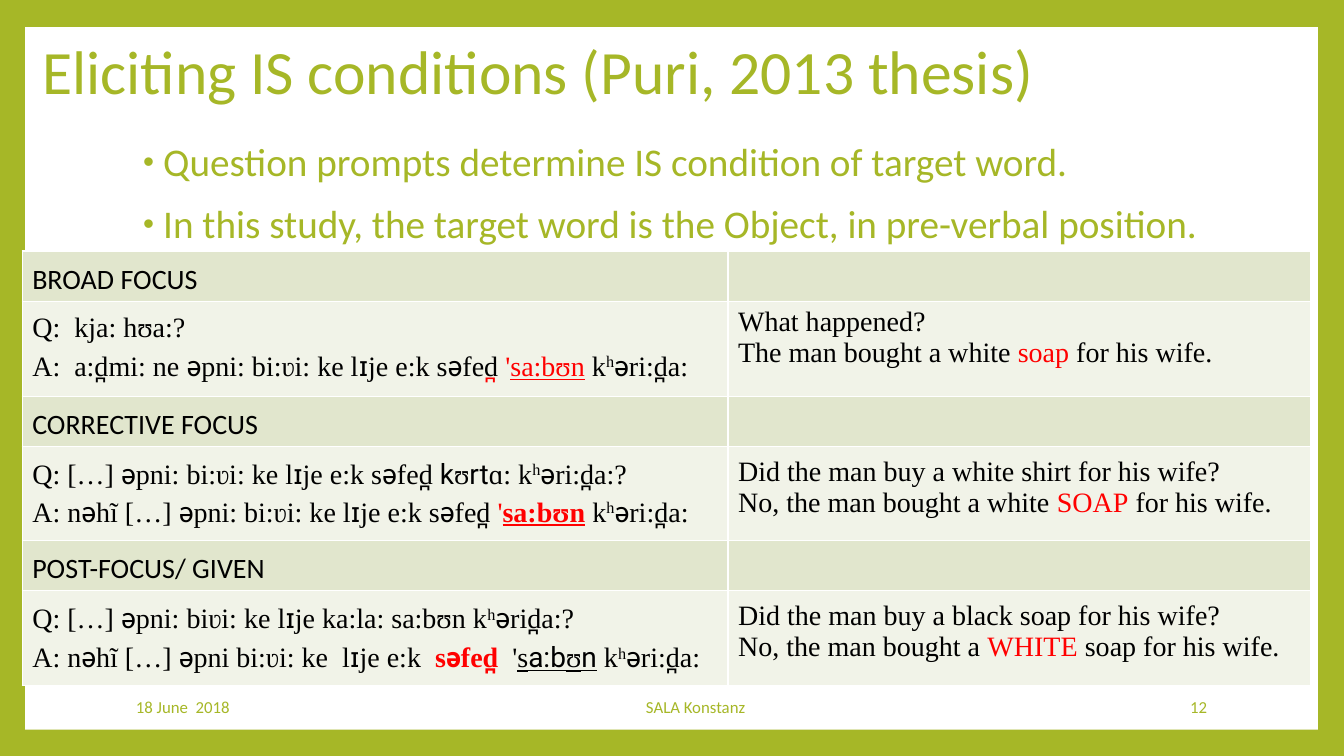
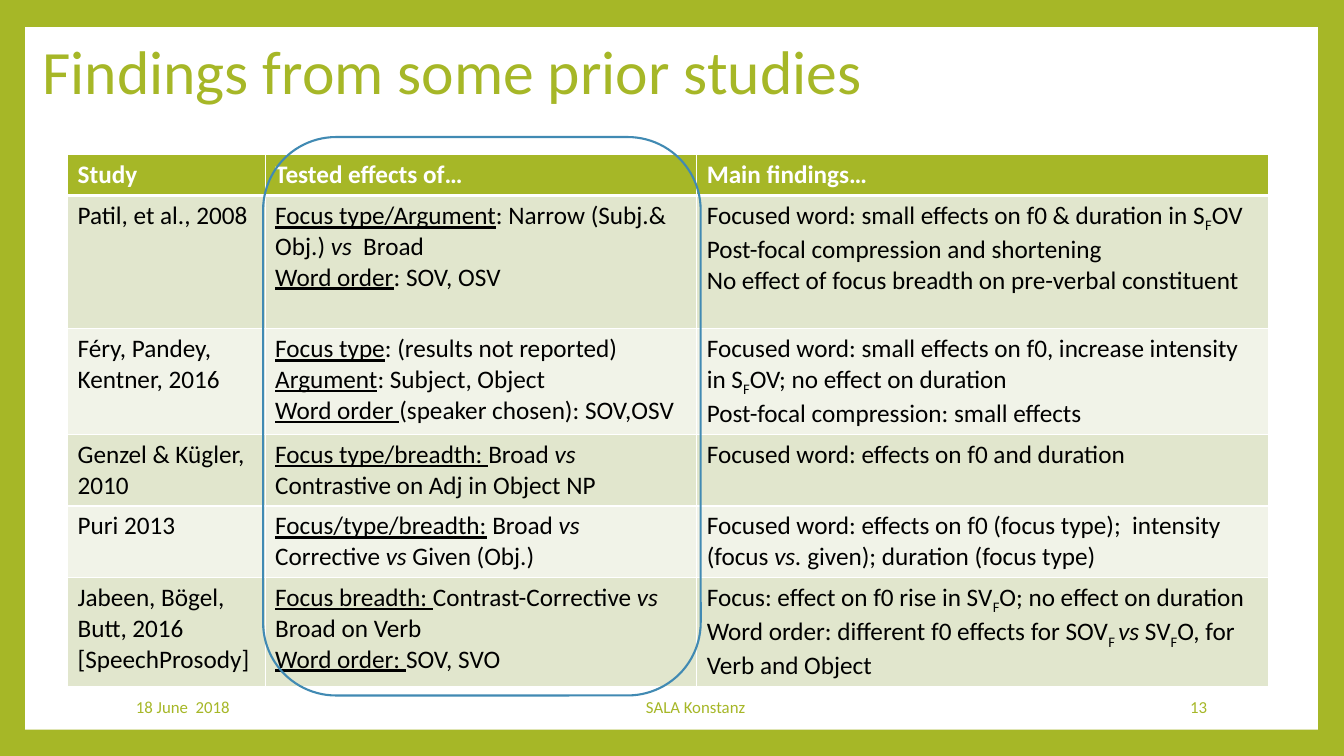
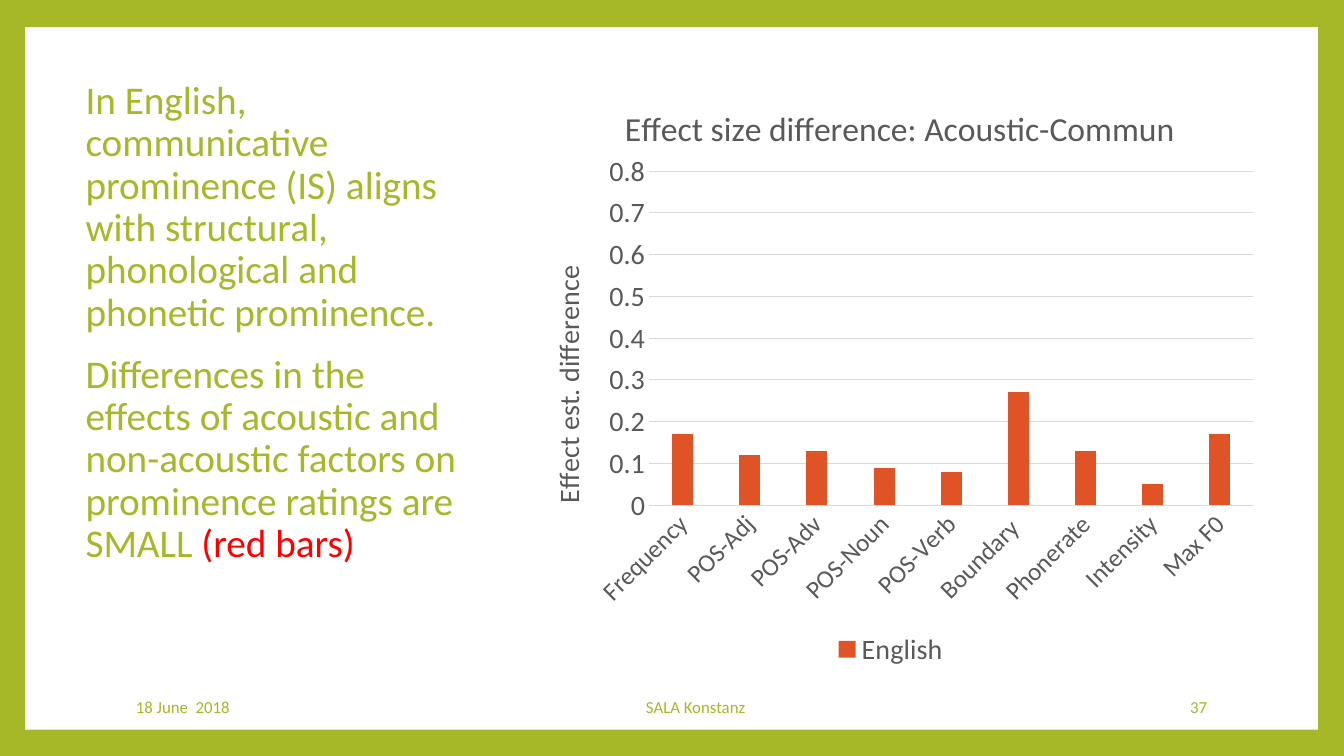
import itertools

import pptx
import pptx.chart.data
import pptx.dml.color
import pptx.enum.chart
import pptx.enum.shapes
import pptx.enum.text
import pptx.oxml
import pptx.oxml.ns
import pptx.util

PX = 9144
COLOURS = {
    "green": "A6B727", "white": "FFFFFF", "black": "000000", "red": "FF0000",
    "band": "E1E6CD", "pale": "F1F3E8", "blue": "418AB3", "orange": "DF5327",
    "grey": "595959", "grid": "D9D9D9",
}
RGB = {name: pptx.dml.color.RGBColor.from_string(code) for name, code in COLOURS.items()}
ALIGN = pptx.enum.text.PP_ALIGN
MIDDLE = pptx.enum.text.MSO_ANCHOR.MIDDLE
SHAPES = pptx.enum.shapes.MSO_SHAPE
Pt = pptx.util.Pt
NAMESPACES = pptx.oxml.ns.nsdecls("a", "c")


def write(frame, markup, size, colour, font="Calibri", bold=False):
    # markup
    frame.text = "\n" * markup.count("\n")
    for para, line in zip(frame.paragraphs, markup.split("\n")):
        for index, piece in enumerate(line.replace("}", "{").split("{")):
            flags, text = piece.split("|") if index % 2 else ("", piece)
            for phonetic, letters in itertools.groupby(
                    text, lambda letter: font != "Calibri" and letter in "əɪ̪"):
                span = para.add_run()
                span.text = "".join(letters)
                span.font.name = "Roboto" if phonetic or "p" in flags else font
                span.font.size = Pt(size)
                span.font.color.rgb = RGB["red" if "r" in flags else colour]
                span.font.bold = bold or "b" in flags
                span.font.italic = "i" in flags
                span.font.underline = "u" in flags
                if "s" in flags or "f" in flags:
                    span.font._element.set("baseline", "30000" if "s" in flags else "-25000")


def add_grid(page, left, top, widths, heights, fills):
    table = page.shapes.add_table(
        len(heights), len(widths), left * PX, top * PX,
        sum(widths) * PX, sum(heights) * PX).table
    for column, width in zip(table.columns, widths):
        column.width = width * PX
    for row, height, fill in zip(table.rows, heights, fills):
        row.height = height * PX
        for cell in row.cells:
            for side in "LRTB":
                weight = 3 if fill == "green" and side == "B" else 1
                cell._tc.get_or_add_tcPr().append(pptx.oxml.parse_xml(
                    f'<a:ln{side} {NAMESPACES} w="{Pt(weight)}"><a:solidFill>'
                    f'<a:srgbClr val="{COLOURS["white"]}"/></a:solidFill></a:ln{side}>'))
            cell.fill.solid()
            cell.fill.fore_color.rgb = RGB[fill]
    return table


deck = pptx.Presentation()
deck.slide_width, deck.slide_height = 1333 * PX, 750 * PX

pages = []
for number, title in [
    ("12", "Eliciting IS conditions (Puri, 2013 thesis)"),
    ("13", "Findings from some prior studies"),
    ("37", ""),
]:
    page = deck.slides.add_slide(deck.slide_layouts[6])
    pages.append(page)
    page.background.fill.solid()
    page.background.fill.fore_color.rgb = RGB["green"]
    panel = page.shapes.add_shape(SHAPES.RECTANGLE, 25 * PX, 27 * PX, 1282 * PX, 697 * PX)
    panel.shadow.inherit = False
    panel.fill.solid()
    panel.fill.fore_color.rgb = RGB["white"]
    panel.line.fill.background()
    if title:
        box = page.shapes.add_textbox(22 * PX, 0, 1080 * PX, 148 * PX)
        frame = box.text_frame
        frame.word_wrap = True
        frame.vertical_anchor = MIDDLE
        frame.margin_left = 20 * PX
        frame.margin_top = frame.margin_right = frame.margin_bottom = 0
        write(frame, title, 44, "green")
        frame.paragraphs[0].line_spacing = 0.9
    for left, width, text, align in [
        (125, 255, "18 June  2018", ALIGN.LEFT),
        (432, 516, "SALA Konstanz", ALIGN.CENTER),
        (1020, 187, number, ALIGN.RIGHT),
    ]:
        box = page.shapes.add_textbox(left * PX, 681 * PX, width * PX, 40 * PX)
        box.text_frame.word_wrap = True
        box.text_frame.vertical_anchor = MIDDLE
        write(box.text_frame, text, 12, "green")
        box.text_frame.paragraphs[0].alignment = align

conditions_page, studies_page, english_page = pages

for page, left, top, width, height, margin, indent, text in [
    (conditions_page, 127, 137, 1131, 442, 25, -20,
     "Question prompts determine IS condition of target word.\n"
     "In this study, the target word is the Object, in pre-verbal position."),
    (english_page, 70, 75, 408, 506, 5, 0,
     "In English, communicative prominence (IS) aligns with structural, "
     "phonological and phonetic prominence.\n"
     "Differences in the effects of acoustic and non-acoustic factors on "
     "prominence ratings are SMALL {r|(red bars)}"),
]:
    box = page.shapes.add_textbox(left * PX, top * PX, width * PX, height * PX)
    box.text_frame.word_wrap = True
    write(box.text_frame, text, 28, "green")
    for para in box.text_frame.paragraphs:
        para.line_spacing = 0.9
        para.space_before = Pt(14)
        properties = para._p.get_or_add_pPr()
        properties.set("marL", str(margin * PX))
        properties.set("indent", str(indent * PX))
        if indent:
            for bullet in [
                f'<a:buClr {NAMESPACES}><a:srgbClr val="{COLOURS["green"]}"/></a:buClr>',
                f'<a:buSzPct {NAMESPACES} val="80000"/>',
                f'<a:buFont {NAMESPACES} typeface="Arial"/>',
                f'<a:buChar {NAMESPACES} char="•"/>',
            ]:
                properties.append(pptx.oxml.parse_xml(bullet))

conditions = [
    ("BROAD FOCUS",
     "Q:  kja: hʊa:?\n"
     "A:  a:d̪mi: ne əpni: bi:ʋi: ke lɪje e:k səfed{r|̪ '}{ru|sa:bʊn} k{s|h}əri:d̪a:",
     "What happened?\nThe man bought a white {r|soap} for his wife."),
    ("CORRECTIVE FOCUS",
     "Q: […] əpni: bi:ʋi: ke lɪje e:k səfed{p|̪ k}ʊ{p|rt}ɑ: k{s|h}əri:d̪a:?\n"
     "A: nəhĩ […] əpni: bi:ʋi: ke lɪje e:k səfed̪ {r|'}{rbu|sa:bʊn} k{s|h}əri:d̪a:",
     "Did the man buy a white shirt for his wife?\n"
     "No, the man bought a white {r|SOAP} for his wife."),
    ("POST-FOCUS/ GIVEN",
     "Q: […] əpni: biʋi: ke lɪje ka:la: sa:bʊn k{s|h}ərid̪a:?\n"
     "A: nəhĩ […] əpni bi:ʋi: ke  lɪje e:k  {rb|səfed}{rbp|̪  }'"
     "{u|s}{pu|a:b}{u|ʊ}{pu|n} k{s|h}əri:d̪a:",
     "Did the man buy a black soap for his wife?\n"
     "No, the man bought a {r|WHITE} soap for his wife."),
]
table = add_grid(conditions_page, 22, 249, [700, 578], [50, 94, 50, 93, 50, 94],
                 ["band", "pale"] * 3)
for index, (heading, dialogue, meaning) in enumerate(conditions):
    heading_frame = table.cell(2 * index, 0).text_frame
    dialogue_frame = table.cell(2 * index + 1, 0).text_frame
    meaning_frame = table.cell(2 * index + 1, 1).text_frame
    write(heading_frame, heading, 20, "black")
    write(dialogue_frame, dialogue, 20, "black", "Times New Roman")
    write(meaning_frame, meaning, 20, "black", "Times New Roman")
    for para in heading_frame.paragraphs + dialogue_frame.paragraphs:
        para.line_spacing = 1.2
    if index:
        meaning_frame.paragraphs[0].line_spacing = 1.15
table.cell(3, 0).text_frame.paragraphs[1].line_spacing = 1.15

studies = [
    ("Study", "Tested effects of…", "Main findings…"),
    ("Patil, et al., 2008",
     "{u|Focus type/Argument}: Narrow (Subj.& Obj.) {i|vs } Broad\n{u|Word order}: SOV, OSV",
     "Focused word: small effects on f0 & duration in S{f|F}OV\n"
     "Post-focal compression and shortening\n"
     "No effect of focus breadth on pre-verbal constituent"),
    ("Féry, Pandey, Kentner, 2016",
     "{u|Focus type}: (results not reported)\n{u|Argument}: Subject, Object\n"
     "{u|Word order }(speaker chosen): SOV,OSV",
     "Focused word: small effects on f0, increase intensity in S{f|F}OV; "
     "no effect on duration\nPost-focal compression: small effects"),
    ("Genzel & Kügler, 2010",
     "{u|Focus type/breadth: }Broad {i|vs }Contrastive on Adj in Object NP",
     "Focused word: effects on f0 and duration"),
    ("Puri 2013",
     "{u|Focus/type/breadth:} Broad {i|vs }Corrective {i|vs }Given (Obj.)",
     "Focused word: effects on f0 (focus type);  intensity (focus {i|vs. }given); "
     "duration (focus type)"),
    ("Jabeen, Bögel, Butt, 2016 [SpeechProsody]",
     "{u|Focus breadth: }Contrast-Corrective {i|vs }Broad on Verb\n{u|Word order: }SOV, SVO",
     "Focus: effect on f0 rise in SV{f|F}O; no effect on duration\n"
     "Word order: different f0 effects for SOV{f|F }{i|vs }SV{f|F}O, for Verb and Object"),
]
table = add_grid(studies_page, 67, 153, [196, 428, 567], [41, 132, 105, 71, 71, 108],
                 ["green", "band", "pale", "band", "pale", "band"])
for index, (row, texts) in enumerate(zip(table.rows, studies)):
    for cell, text in zip(row.cells, texts):
        write(cell.text_frame, text, 18, "black" if index else "white", bold=index == 0)

highlight = studies_page.shapes.add_shape(
    SHAPES.ROUNDED_RECTANGLE, 261 * PX, 136 * PX, 434 * PX, 554 * PX)
highlight.shadow.inherit = False
highlight.fill.background()
highlight.line.color.rgb = RGB["blue"]
highlight.line.width = Pt(1.5)

data = pptx.chart.data.CategoryChartData()
data.categories = ["Frequency", "POS-Adj", "POS-Adv", "POS-Noun", "POS-Verb",
                   "Boundary ", "Phonerate", "Intensity", "Max F0"]
data.add_series("English", [0.17, 0.12, 0.13, 0.09, 0.08, 0.27, 0.13, 0.05, 0.17])
chart = english_page.shapes.add_chart(
    pptx.enum.chart.XL_CHART_TYPE.COLUMN_CLUSTERED,
    509 * PX, 75 * PX, 749 * PX, 592 * PX, data).chart
chart.font.name = "Calibri"
chart.font.size = Pt(10)
chart.has_title = True
write(chart.chart_title.text_frame, "Effect size difference: Acoustic-Commun", 24, "grey")
chart.has_legend = True
chart.legend.position = pptx.enum.chart.XL_LEGEND_POSITION.BOTTOM
chart.legend.include_in_layout = False

plot = chart.plots[0]
plot.gap_width = 219
plot.overlap = -27
plot.vary_by_categories = False
bars = plot.series[0].format.fill
bars.solid()
bars.fore_color.rgb = RGB["orange"]

categories, values = chart.category_axis, chart.value_axis
for font, size in [(categories.tick_labels.font, 18), (values.tick_labels.font, 20),
                   (chart.legend.font, 20)]:
    font.name = "Calibri"
    font.size = Pt(size)
    font.color.rgb = RGB["grey"]
for axis in (categories, values):
    axis.major_tick_mark = axis.minor_tick_mark = pptx.enum.chart.XL_TICK_MARK.NONE
values.minimum_scale, values.maximum_scale, values.major_unit = 0, 0.8, 0.1
values.has_major_gridlines = True
for line in (categories.format.line, values.major_gridlines.format.line):
    line.color.rgb = RGB["grid"]
    line.width = Pt(0.75)
values.format.line.fill.background()
values.has_title = True
write(values.axis_title.text_frame, "Effect est. difference", 20, "grey")

for query, angle in [("c:valAx/c:title//a:bodyPr", -90), ("c:catAx/c:txPr/a:bodyPr", -45)]:
    body = chart.element.xpath(".//" + query)[0]
    body.set("rot", str(angle * 60000))
    body.set("vert", "horz")

for query, position, target, places in [
    ("c:chart/c:title", 1, "", {"x": 0.14, "y": 0.04}),
    (".//c:valAx/c:title", 1, "", {"x": 0.04, "y": 0.31}),
    (".//c:plotArea", 0, '<c:layoutTarget val="inner"/>',
     {"x": 0.18, "y": 0.16, "w": 0.8, "h": 0.56}),
]:
    parent = chart.element.xpath(query)[0]
    for layout in parent.xpath("c:layout"):
        parent.remove(layout)
    modes = "".join(f'<c:{key}Mode val="edge"/>' for key in "xy")
    sizes = "".join(f'<c:{key} val="{value}"/>' for key, value in places.items())
    parent.insert(position, pptx.oxml.parse_xml(
        f"<c:layout {NAMESPACES}><c:manualLayout>{target}{modes}{sizes}"
        "</c:manualLayout></c:layout>"))

deck.save("out.pptx")
